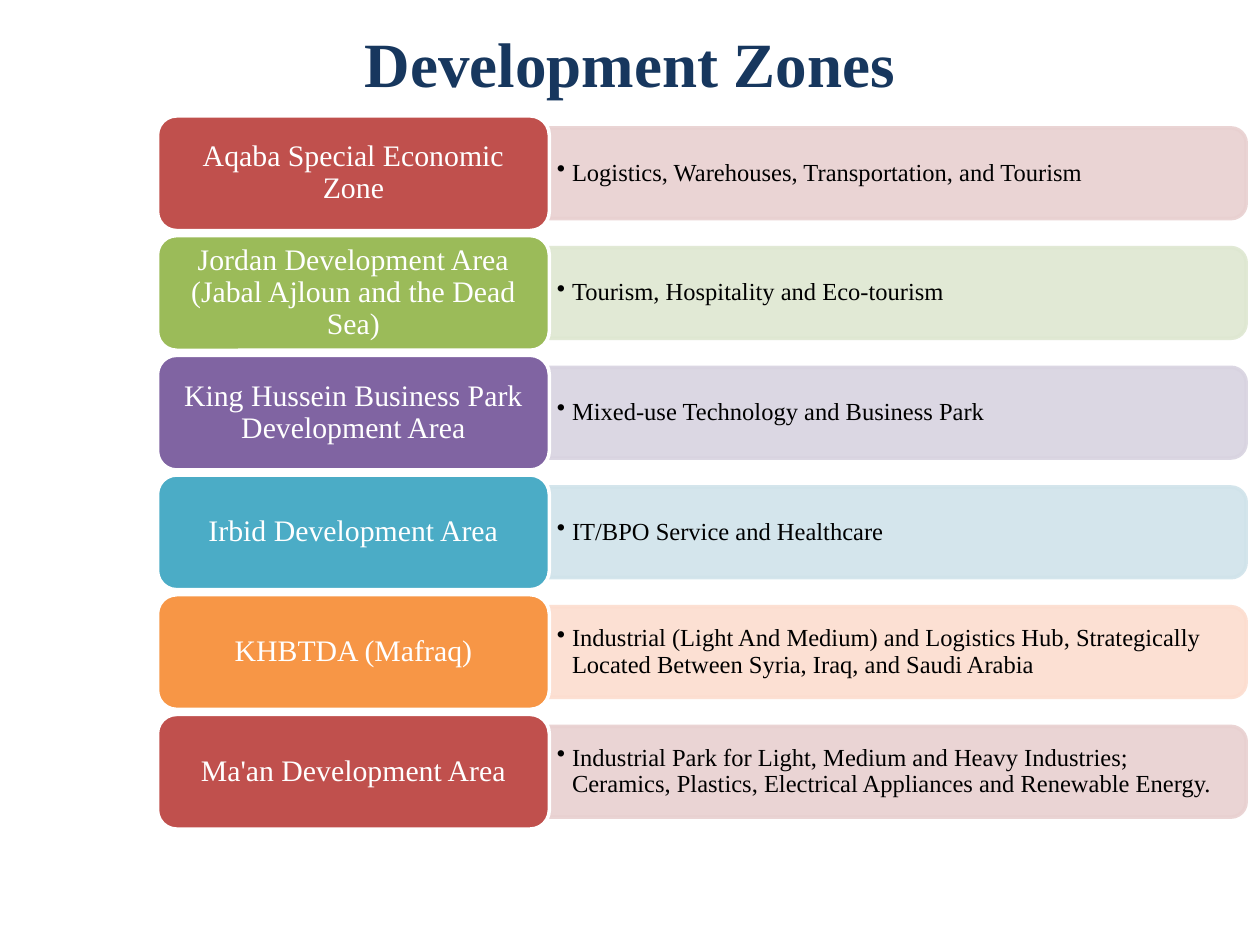
from lxml import etree
from pptx import Presentation
from pptx.dml.color import RGBColor
from pptx.enum.shapes import MSO_SHAPE
from pptx.enum.text import MSO_ANCHOR, PP_ALIGN
from pptx.oxml.ns import qn
from pptx.util import Inches, Pt

ROUND_RECT = MSO_SHAPE.ROUNDED_RECTANGLE
ROUND_TOP_RECT = MSO_SHAPE.ROUND_2_SAME_RECTANGLE
MIDDLE = MSO_ANCHOR.MIDDLE
LEFT, CENTER = PP_ALIGN.LEFT, PP_ALIGN.CENTER

FONT = "Times New Roman"
ZONES_LEFT, ZONES_TOP = 1.25, 0.92
ROW_PITCH, ROW_HEIGHT = 0.95, 0.91
LABEL_WIDTH, DETAIL_WIDTH = 3.11, 5.53
DETAIL_HEIGHT, DETAIL_TEXT_HEIGHT = 0.72, 0.65

RED, GREEN, PURPLE = ("C0504D", "E8D0D0"), ("9BBB59", "DEE7D1"), ("8064A2", "D8D3E0")
BLUE, ORANGE = ("4BACC6", "D0E3EA"), ("F79646", "FCDDCF")
ZONES = [
    ("Aqaba Special Economic Zone",
     "Logistics, Warehouses, Transportation, and Tourism", RED),
    ("Jordan Development Area (Jabal Ajloun and the Dead Sea)",
     "Tourism, Hospitality and Eco-tourism", GREEN),
    ("King Hussein Business Park Development Area",
     "Mixed-use Technology and Business Park", PURPLE),
    ("Irbid Development Area",
     "IT/BPO Service and Healthcare", BLUE),
    ("KHBTDA (Mafraq)",
     "Industrial (Light And Medium) and Logistics Hub, Strategically "
     "Located Between Syria, Iraq, and Saudi Arabia", ORANGE),
    ("Ma'an Development Area",
     "Industrial Park for Light, Medium and Heavy Industries; Ceramics, "
     "Plastics, Electrical Appliances and Renewable Energy.", RED),
]


def rgb(value):
    return RGBColor.from_string(value)


def add_bullet(paragraph, indent):
    properties = paragraph._p.get_or_add_pPr()
    properties.set("marL", str(Inches(indent)))
    properties.set("indent", str(-Inches(indent)))
    etree.SubElement(properties, qn("a:buChar")).set("char", "•")


def write_text(holder, text, size, color, bold=False, align=LEFT,
               spacing=None, insets=(0.1, 0.05), bullet_indent=None):
    frame = holder.text_frame
    frame.word_wrap = True
    frame.vertical_anchor = MIDDLE
    frame.margin_left = frame.margin_right = Inches(insets[0])
    frame.margin_top = frame.margin_bottom = Inches(insets[1])
    frame.text = text
    paragraph = frame.paragraphs[0]
    paragraph.alignment = align
    if spacing:
        paragraph.line_spacing = spacing
    if bullet_indent:
        add_bullet(paragraph, bullet_indent)
    font = paragraph.runs[0].font
    font.name, font.size, font.bold = FONT, Pt(size), bold
    font.color.rgb = rgb(color)


def add_panel(slide, preset, left, top, width, height, fill, line):
    panel = slide.shapes.add_shape(
        preset, Inches(left), Inches(top), Inches(width), Inches(height))
    panel.shadow.inherit = False
    panel.fill.solid()
    panel.fill.fore_color.rgb = rgb(fill)
    panel.line.color.rgb = rgb(line)
    panel.line.width = Pt(2)
    return panel


def set_opacity(panel, percent):
    for color in panel._element.spPr.iter(qn("a:srgbClr")):
        etree.SubElement(color, qn("a:alpha")).set("val", str(percent * 1000))


def place_title(slide, left, top, width, height):
    title = slide.shapes.title
    title.left, title.top = Inches(left), Inches(top)
    title.width, title.height = Inches(width), Inches(height)
    title.fill.solid()
    title.fill.fore_color.rgb = rgb("FFFFFF")
    write_text(title, "Development Zones", size=36, color="17375E",
               bold=True, align=CENTER)


def add_detail(slide, left, middle, width, text, tint):
    bar = add_panel(slide, ROUND_TOP_RECT,
                    left + (width - DETAIL_HEIGHT) / 2, middle - width / 2,
                    DETAIL_HEIGHT, width, tint, tint)
    bar.rotation = 90
    set_opacity(bar, 90)
    detail = slide.shapes.add_textbox(
        Inches(left), Inches(middle - DETAIL_TEXT_HEIGHT / 2),
        Inches(width - 0.04), Inches(DETAIL_TEXT_HEIGHT))
    write_text(detail, text, size=14, color="000000", spacing=0.9,
               insets=(0.06, 0.03), bullet_indent=0.12)


def add_zone(slide, left, top, name, activities, colors):
    strong, tint = colors
    add_detail(slide, left + LABEL_WIDTH, top + ROW_HEIGHT / 2, DETAIL_WIDTH,
               activities, tint)
    label = add_panel(slide, ROUND_RECT, left, top, LABEL_WIDTH, ROW_HEIGHT,
                      strong, "FFFFFF")
    write_text(label, name, size=17, color="FFFFFF", align=CENTER,
               spacing=0.9, insets=(0.07, 0.04))


def main():
    deck = Presentation()
    deck.slide_width, deck.slide_height = Inches(10), Inches(7.5)
    slide = deck.slides.add_slide(deck.slide_layouts[5])
    place_title(slide, 1, 0.08, 8, 0.83)
    for row, (name, activities, colors) in enumerate(ZONES):
        add_zone(slide, ZONES_LEFT, ZONES_TOP + row * ROW_PITCH,
                 name, activities, colors)
    deck.save("out.pptx")


if __name__ == "__main__":
    main()
